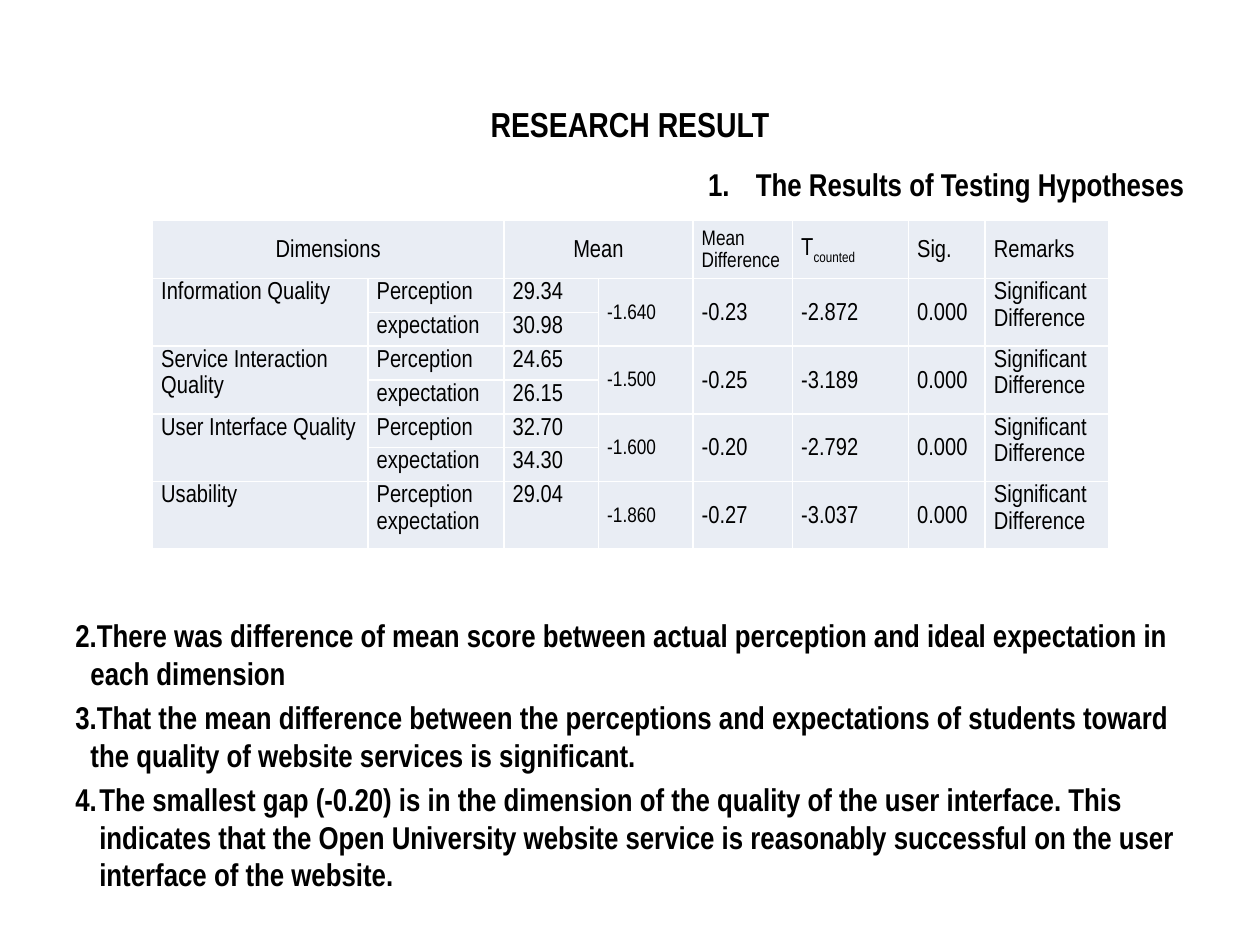
from dataclasses import dataclass
from typing import Optional

from lxml import etree
from pptx import Presentation, util as u
from pptx.dml.color import RGBColor
from pptx.enum import text as t
from pptx.oxml.ns import qn

FONT = "Arial Narrow"
BLACK = RGBColor(0, 0, 0)
WHITE = RGBColor(255, 255, 255)
CELL_FILL = RGBColor(0xE9, 0xED, 0xF4)
LEFT, CENTER, RIGHT, JUSTIFY = (t.PP_ALIGN.LEFT, t.PP_ALIGN.CENTER,
                                t.PP_ALIGN.RIGHT, t.PP_ALIGN.JUSTIFY)
TOP, MIDDLE = t.MSO_ANCHOR.TOP, t.MSO_ANCHOR.MIDDLE

COLUMN_WIDTHS = [1.71, 1.08, 0.75, 0.75, 0.79, 0.92, 0.61, 0.98]
ROW_HEIGHTS = [0.35] + [0.21] * 6 + [0.42]


@dataclass
class Dimension:
    name: str
    perception: str
    expectation: Optional[str]  # None: both labels share one row
    gap: str
    mean_difference: str
    t_counted: str
    align: t.PP_ALIGN = JUSTIFY


@dataclass
class Finding:
    text: str
    number: int
    indent: float
    align: t.PP_ALIGN = LEFT


DIMENSIONS = [
    Dimension("Information Quality", "29.34", "30.98", "-1.640", "-0.23", "-2.872"),
    Dimension("Service Interaction Quality", "24.65", "26.15", "-1.500", "-0.25",
              "-3.189", LEFT),
    Dimension("User Interface Quality", "32.70", "34.30", "-1.600", "-0.20", "-2.792"),
    Dimension("Usability", "29.04", None, "-1.860", "-0.27", "-3.037"),
]
HYPOTHESES = Finding("The Results of Testing Hypotheses", 1, 0.38, RIGHT)
CONCLUSIONS = [
    Finding("There was difference of mean score between actual perception and ideal "
            "expectation in each dimension", 2, 0.12),
    Finding("That the mean difference between the perceptions and expectations of "
            "students toward the quality of website services is significant.", 2, 0.12),
    Finding("The smallest gap (-0.20) is in the dimension of the quality of the user "
            "interface. This indicates that the Open University website service is "
            "reasonably successful on the user interface of the website.", 2, 0.19),
]


def add_run(paragraph, words: str, size: float, bold: bool = False):
    run = paragraph.add_run()
    run.text = words
    run.font.name = FONT
    run.font.size = u.Pt(size)
    run.font.bold = bold
    run.font.color.rgb = BLACK
    return run


def add_frame(slide, top: float, height: float):
    box = slide.shapes.add_textbox(u.Inches(0.5), u.Inches(top),
                                   u.Inches(9), u.Inches(height))
    box.text_frame.word_wrap = True
    return box.text_frame


def add_findings(slide, top: float, height: float, findings: list[Finding]) -> None:
    """Write numbered paragraphs; equal start numbers count on as one list."""
    frame = add_frame(slide, top, height)
    for index, finding in enumerate(findings):
        paragraph = frame.add_paragraph() if index else frame.paragraphs[0]
        paragraph.alignment = finding.align
        if index:
            paragraph.space_before = u.Pt(3.6)
        properties = paragraph._p.get_or_add_pPr()
        indent = u.Inches(finding.indent)
        properties.set("marL", str(indent))
        properties.set("indent", str(-indent))
        etree.SubElement(properties, qn("a:buAutoNum"), type="arabicPeriod",
                         startAt=str(finding.number))
        add_run(paragraph, finding.text, 18, bold=True)


def style_cell(cell) -> None:
    cell.margin_left = cell.margin_right = u.Inches(0.07)
    cell.margin_top = cell.margin_bottom = 0
    properties = cell._tc.get_or_add_tcPr()
    for side in ("a:lnL", "a:lnR", "a:lnT", "a:lnB"):
        line = etree.SubElement(properties, qn(side), w=str(u.Pt(1)))
        solid = etree.SubElement(line, qn("a:solidFill"))
        etree.SubElement(solid, qn("a:srgbClr"), val=str(WHITE))
    cell.fill.solid()
    cell.fill.fore_color.rgb = CELL_FILL


def write_cell(cell, lines: str, size: float = 14, align: t.PP_ALIGN = JUSTIFY,
               anchor: t.MSO_ANCHOR = MIDDLE) -> None:
    cell.vertical_anchor = anchor
    for index, words in enumerate(lines.split("\n")):
        frame = cell.text_frame
        paragraph = frame.add_paragraph() if index else frame.paragraphs[0]
        paragraph.alignment = align
        paragraph.line_spacing = 1.15
        add_run(paragraph, words, size)


def write_header(table) -> None:
    for column, heading in ((0, "Dimensions"), (2, "Mean")):
        table.cell(0, column).merge(table.cell(0, column + 1))
        write_cell(table.cell(0, column), heading, align=CENTER)
    write_cell(table.cell(0, 4), "Mean\nDifference", 12)
    for column, heading in enumerate(("T", "Sig.", "Remarks"), start=5):
        write_cell(table.cell(0, column), heading)
    subscript = add_run(table.cell(0, 5).text_frame.paragraphs[0], "counted", 14)
    subscript._r.get_or_add_rPr().set("baseline", "-25000")


def write_dimension(table, row: int, dimension: Dimension) -> None:
    if dimension.expectation:
        for column in (0, 3, 4, 5, 6, 7):
            table.cell(row, column).merge(table.cell(row + 1, column))
        write_cell(table.cell(row, 1), "Perception", anchor=TOP)
        write_cell(table.cell(row + 1, 1), "expectation", anchor=TOP)
        write_cell(table.cell(row + 1, 2), dimension.expectation, anchor=TOP)
    else:
        write_cell(table.cell(row, 1), "Perception\nexpectation", anchor=TOP)
    write_cell(table.cell(row, 0), dimension.name, align=dimension.align, anchor=TOP)
    write_cell(table.cell(row, 2), dimension.perception, anchor=TOP)
    write_cell(table.cell(row, 3), dimension.gap, 12)
    write_cell(table.cell(row, 4), dimension.mean_difference)
    write_cell(table.cell(row, 5), dimension.t_counted)
    write_cell(table.cell(row, 6), "0.000")
    write_cell(table.cell(row, 7), "Significant Difference", anchor=TOP)


def add_results_table(slide) -> None:
    table = slide.shapes.add_table(
        len(ROW_HEIGHTS), len(COLUMN_WIDTHS), u.Inches(1.21), u.Inches(1.75),
        u.Inches(sum(COLUMN_WIDTHS)), u.Inches(sum(ROW_HEIGHTS))).table
    table.first_row = table.horz_banding = False
    for column, width in zip(table.columns, COLUMN_WIDTHS):
        column.width = u.Inches(width)
    for row, height in zip(table.rows, ROW_HEIGHTS):
        row.height = u.Inches(height)
    for cell in table.iter_cells():
        style_cell(cell)
    write_header(table)
    for index, dimension in enumerate(DIMENSIONS):
        write_dimension(table, 1 + 2 * index, dimension)


def main() -> None:
    deck = Presentation()
    deck.slide_width, deck.slide_height = u.Inches(10), u.Inches(7.5)
    slide = deck.slides.add_slide(deck.slide_layouts[6])
    title = add_frame(slide, 0.73, 0.5)
    title.vertical_anchor = MIDDLE
    title.paragraphs[0].alignment = CENTER
    add_run(title.paragraphs[0], "RESEARCH RESULT", 19.8, bold=True)
    add_findings(slide, 1.26, 0.4, [HYPOTHESES])
    add_results_table(slide)
    add_findings(slide, 4.84, 2.3, CONCLUSIONS)
    deck.save("out.pptx")


if __name__ == "__main__":
    main()
